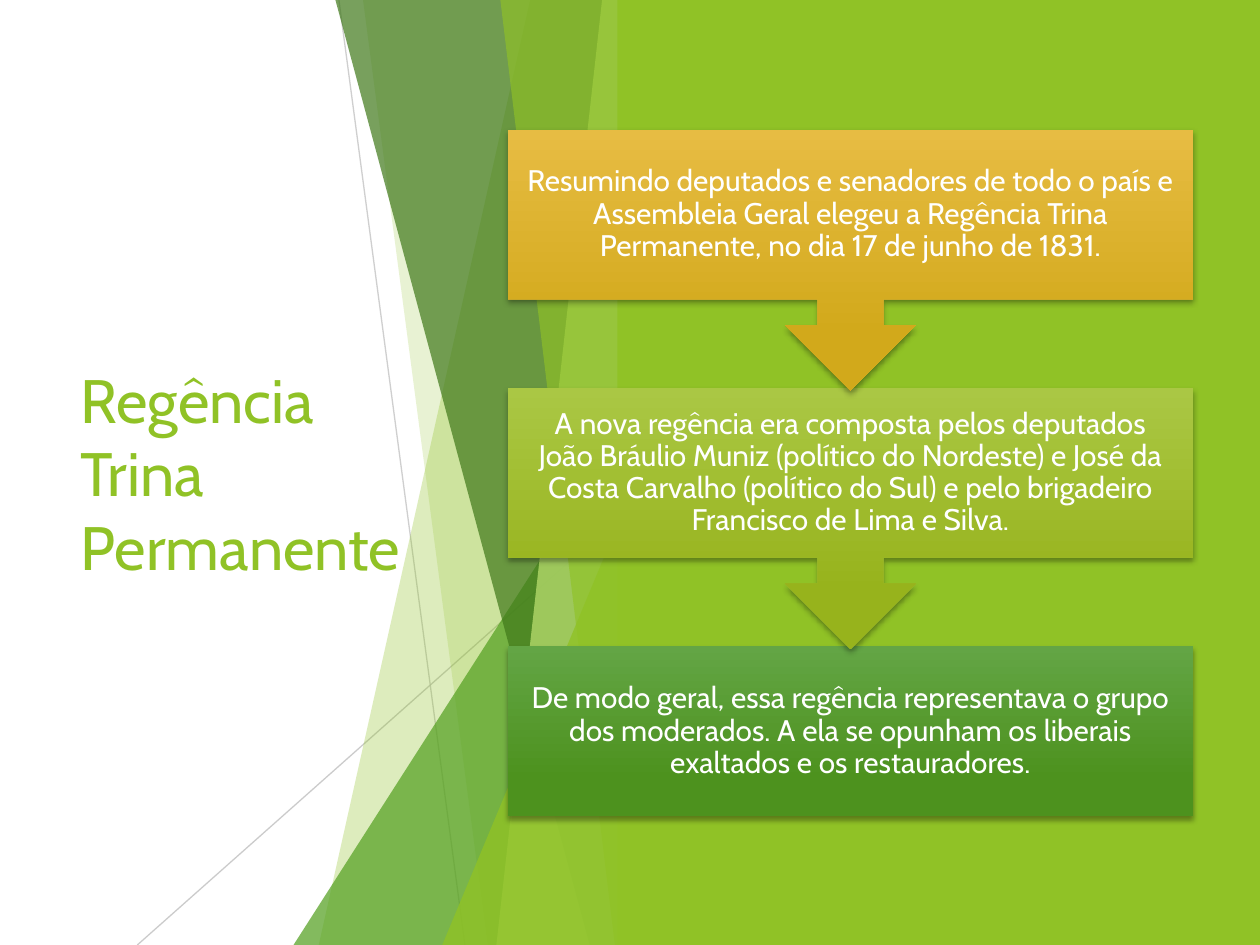
from dataclasses import dataclass
from typing import Any

from lxml import etree
from pptx import Presentation
from pptx import util as u
from pptx.dml.color import RGBColor
from pptx.enum import shapes, text
from pptx.oxml import ns

FONT = "Cabin"
GREEN = "90C226"
WHITE = "FFFFFF"
SHAPE = shapes.MSO_SHAPE
PANEL_EDGE = 5
TOP, BOTTOM = -0.01, 7.5


@dataclass
class Ray:
    start: tuple[float, float]
    end: tuple[float, float]
    opacity: int


@dataclass
class Shard:
    top_x: float
    bottom_x: float
    color: str
    opacity: int


@dataclass
class Wedge:
    left: float
    top: float
    color: str
    opacity: int


@dataclass
class Step:
    words: str
    light: str
    dark: str
    kind: Any
    height: float


RAYS = [Ray((2.69, 0), (3.69, 7.5), 75), Ray((5, 4.03), (1.09, 7.5), 80)]
FACETS = [
    Shard(4.21, 2.53, GREEN, 30),
    Shard(2.88, 3.87, GREEN, 20),
    Wedge(2.33, 3.33, "54A021", 72),
    Shard(2.66, 4.68, "3F7819", 70),
    Shard(4.78, 3.94, "C0E474", 70),
    Shard(3.97, 4.88, GREEN, 65),
    Wedge(3.51, 3.93, GREEN, 80),
]
STEPS = [
    Step(
        "Resumindo deputados e senadores de todo o país e Assembleia Geral elegeu "
        "a Regência Trina Permanente, no dia 17 de junho de 1831.",
        "E7BC43", "D2A91B", SHAPE.DOWN_ARROW_CALLOUT, 2.07,
    ),
    Step(
        "A nova regência era composta pelos deputados João Bráulio Muniz (político "
        "do Nordeste) e José da Costa Carvalho (político do Sul) e pelo brigadeiro "
        "Francisco de Lima e Silva.",
        "AAC744", "97B31C", SHAPE.DOWN_ARROW_CALLOUT, 2.07,
    ),
    Step(
        "De modo geral, essa regência representava o grupo dos moderados. A ela se "
        "opunham os liberais exaltados e os restauradores.",
        "63A545", "4D921E", SHAPE.RECTANGLE, 1.35,
    ),
]


def rgb(color: str) -> RGBColor:
    return RGBColor.from_string(color)


def set_opacity(owner: Any, percent: int) -> None:
    color = next(owner.iter(ns.qn("a:srgbClr")))
    etree.SubElement(color, ns.qn("a:alpha"), val=str(percent * 1000))


def paint(shape: Any, color: str, opacity: int = 100) -> None:
    shape.shadow.inherit = False
    shape.line.fill.background()
    shape.fill.solid()
    shape.fill.fore_color.rgb = rgb(color)
    if opacity < 100:
        set_opacity(shape._element.spPr, opacity)


def draw_ray(page: Any, ray: Ray) -> None:
    line = page.shapes.add_connector(
        shapes.MSO_CONNECTOR.STRAIGHT, *map(u.Inches, ray.start + ray.end)
    )
    line.line.color.rgb = rgb("BFBFBF")
    line.line.width = u.Pt(0.75)
    properties = line._element.spPr
    set_opacity(properties, ray.opacity)
    etree.SubElement(properties, ns.qn("a:effectLst"))


def draw_shard(page: Any, shard: Shard) -> None:
    corners = [
        (u.Inches(x), u.Inches(y))
        for x, y in (
            (shard.top_x, TOP),
            (PANEL_EDGE, TOP),
            (PANEL_EDGE, BOTTOM),
            (shard.bottom_x, BOTTOM),
        )
    ]
    builder = page.shapes.build_freeform(*corners[0])
    builder.add_line_segments(corners[1:], close=True)
    paint(builder.convert_to_shape(), shard.color, shard.opacity)


def draw_wedge(page: Any, wedge: Wedge) -> None:
    triangle = page.shapes.add_shape(
        SHAPE.ISOSCELES_TRIANGLE,
        u.Inches(wedge.left),
        u.Inches(wedge.top),
        u.Inches(PANEL_EDGE - wedge.left),
        u.Inches(BOTTOM - wedge.top),
    )
    triangle.adjustments[0] = 1
    paint(triangle, wedge.color, wedge.opacity)


def add_shadow(shape: Any) -> None:
    shape.shadow.inherit = False
    effects = shape._element.spPr.find(ns.qn("a:effectLst"))
    shadow = etree.SubElement(
        effects, ns.qn("a:outerShdw"), blurRad=str(u.Pt(3)), dist=str(u.Pt(2)),
        dir="5400000", rotWithShape="0",
    )
    etree.SubElement(shadow, ns.qn("a:srgbClr"), val="000000")
    set_opacity(shadow, 35)


def draw_step(page: Any, step: Step, top: float) -> None:
    box = page.shapes.add_shape(
        step.kind, u.Inches(4.03), u.Inches(top), u.Inches(5.44), u.Inches(step.height)
    )
    box.line.fill.background()
    box.fill.gradient()
    box.fill.gradient_angle = 270
    stops = box.fill.gradient_stops
    for stop, color, position in zip(stops, (step.light, step.dark), (0, 0.78)):
        stop.color.rgb = rgb(color)
        stop.position = position
    add_shadow(box)

    frame = box.text_frame
    frame.word_wrap = True
    frame.vertical_anchor = text.MSO_ANCHOR.MIDDLE
    frame.margin_left = frame.margin_right = u.Inches(0.14)
    frame.margin_top = frame.margin_bottom = u.Inches(0.13)
    frame.text = step.words
    para = frame.paragraphs[0]
    para.alignment = text.PP_ALIGN.CENTER
    para.line_spacing = 0.9
    set_font(para, 17, WHITE)


def set_font(para: Any, size: float, color: str) -> None:
    para.font.name = FONT
    para.font.size = u.Pt(size)
    para.font.color.rgb = rgb(color)


def place_title(page: Any, words: str) -> None:
    title = page.shapes.title
    title.left, title.top = u.Inches(0.54), u.Inches(1.51)
    title.width, title.height = u.Inches(2.91), u.Inches(4.48)
    frame = title.text_frame
    frame.text = words
    frame.word_wrap = True
    frame.auto_size = text.MSO_AUTO_SIZE.NONE
    frame.vertical_anchor = text.MSO_ANCHOR.MIDDLE
    para = frame.paragraphs[0]
    para.alignment = text.PP_ALIGN.LEFT
    set_font(para, 35, GREEN)


def main() -> None:
    deck = Presentation()
    deck.slide_width, deck.slide_height = u.Inches(10), u.Inches(7.5)
    page = deck.slides.add_slide(deck.slide_layouts[5])
    place_title(page, "Regência Trina Permanente")
    for ray in RAYS:
        draw_ray(page, ray)
    for facet in FACETS:
        if isinstance(facet, Shard):
            draw_shard(page, facet)
        else:
            draw_wedge(page, facet)
    panel = page.shapes.add_shape(
        SHAPE.RECTANGLE, u.Inches(4.9), 0, u.Inches(5.1), u.Inches(7.5)
    )
    paint(panel, GREEN)
    for index, step in reversed(list(enumerate(STEPS))):
        draw_step(page, step, 1.03 + 2.05 * index)
    deck.save("out.pptx")


if __name__ == "__main__":
    main()
